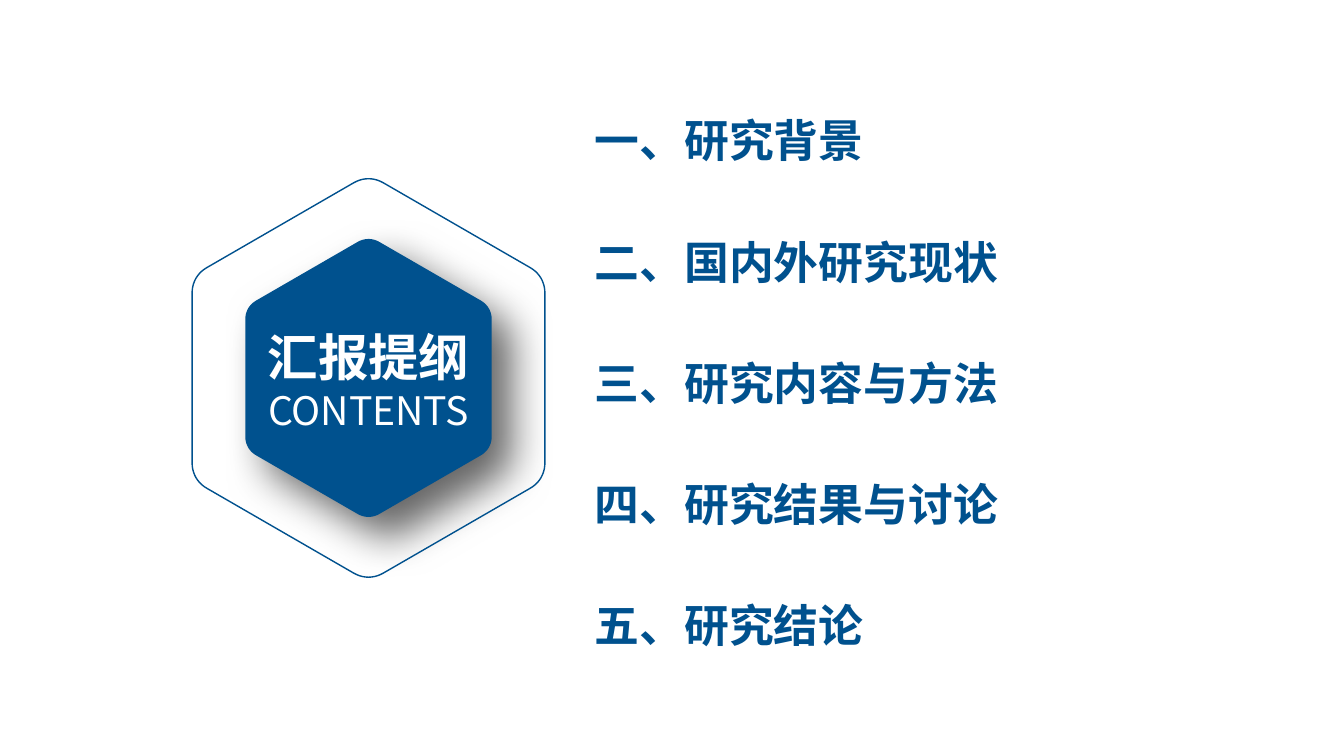
from math import cos, pi, sin

from pptx import Presentation
from pptx.dml.color import RGBColor
from pptx.enum.text import MSO_AUTO_SIZE, PP_ALIGN
from pptx.oxml import parse_xml
from pptx.oxml.ns import nsdecls, qn
from pptx.oxml.xmlchemy import OxmlElement
from pptx.util import Pt

PX = 9525
BLUE, WHITE = "00518E", "FFFFFF"
FACE = "Noto Sans CJK SC"
ITEMS = ["一、研究背景", "二、国内外研究现状", "三、研究内容与方法",
         "四、研究结果与讨论", "五、研究结论"]


def px(n):
    return round(n * PX)


def color(code):
    return RGBColor.from_string(code)


# Text: one paragraph per (words, format) pair
def add_text(slide, box, lines, hue, align):
    frame = slide.shapes.add_textbox(*map(px, box)).text_frame
    frame.word_wrap = True
    frame.auto_size = MSO_AUTO_SIZE.SHAPE_TO_FIT_TEXT
    for i, (words, form) in enumerate(lines):
        para = frame.add_paragraph() if i else frame.paragraphs[0]
        para.alignment = align
        run = para.add_run()
        run.text = words
        run.font.color.rgb = color(hue)
        for key, value in {"name": FACE, **form}.items():
            setattr(run.font, key, value)
        east = OxmlElement("a:ea")
        east.set("typeface", FACE)
        run.font._element.append(east)


# Outline of a hexagon whose corners are rounded by Bezier curves
def hex_points(cx, cy, half, steps=10):
    size = half / cos(pi / 6)
    tips = [(cx + size * sin(k * pi / 3), cy - size * cos(k * pi / 3))
            for k in range(6)]
    points = []
    for k, tip in enumerate(tips):
        def toward(other, part):
            return [a + (b - a) * part for a, b in zip(tip, other)]

        last, after = tips[k - 1], tips[(k + 1) % 6]
        curve = [toward(last, 0.084), toward(last, 0.03),
                 toward(after, 0.03), toward(after, 0.084)]
        for n in range(steps + 1):
            t = n / steps
            mix = [(1 - t) ** 3, 3 * t * (1 - t) ** 2, 3 * t * t * (1 - t), t ** 3]
            points.append(tuple(px(sum(m * p[axis] for m, p in zip(mix, curve)))
                                for axis in (0, 1)))
    return points


def add_hex(slide, cx, cy, half, width, fill=None):
    first, *rest = hex_points(cx, cy, half)
    path = slide.shapes.build_freeform(*first, scale=1.0)
    path.add_line_segments(rest, close=True)
    shape = path.convert_to_shape()
    shape.shadow.inherit = False
    shape.line.color.rgb = color(BLUE)
    shape.line.width = Pt(width)
    if fill:
        shape.fill.solid()
        shape.fill.fore_color.rgb = color(fill)
    else:
        shape.fill.background()
    return shape


def add_shadow(shape, blur, dist, angle, alpha):
    effects = shape._element.spPr.find(qn("a:effectLst"))
    effects.append(parse_xml(
        f'<a:outerShdw {nsdecls("a")} blurRad="{Pt(blur)}" dist="{Pt(dist)}" '
        f'dir="{angle * 60000}" algn="tl" rotWithShape="0">'
        f'<a:srgbClr val="000000"><a:alpha val="{alpha * 1000}"/></a:srgbClr>'
        '</a:outerShdw>'))


# Badge: filled hexagon, outer ring and title
def add_badge(slide, box):
    left, top, wide, high = box
    cx, cy = left + wide / 2, top + high / 2
    core = add_hex(slide, cx, cy, 116, 2, BLUE)
    add_shadow(core, 30, 20, 45, 60)
    add_hex(slide, cx, cy, wide / 2, 1)
    add_text(slide, (cx - 117, cy - 54, 234, 113),
             [("汇报提纲", {"size": Pt(36), "bold": True}),
              ("CONTENTS", {"size": Pt(28), "bold": False})],
             WHITE, PP_ALIGN.CENTER)


# Agenda: items spread evenly over the box
def add_list(slide, box, items):
    left, top, wide, high = box
    row = 61
    pitch = (high - row) / (len(items) - 1)
    for i, item in enumerate(items):
        add_text(slide, (left, top + i * pitch, wide, row),
                 [(item, {"size": Pt(32), "bold": True})], BLUE, PP_ALIGN.LEFT)


def main():
    deck = Presentation()
    deck.slide_width, deck.slide_height = px(1280), px(720)
    slide = deck.slides.add_slide(deck.slide_layouts[6])
    add_badge(slide, (183, 169, 336, 382))
    add_list(slide, (557, 103, 581, 523), ITEMS)
    deck.save("out.pptx")


if __name__ == "__main__":
    main()
